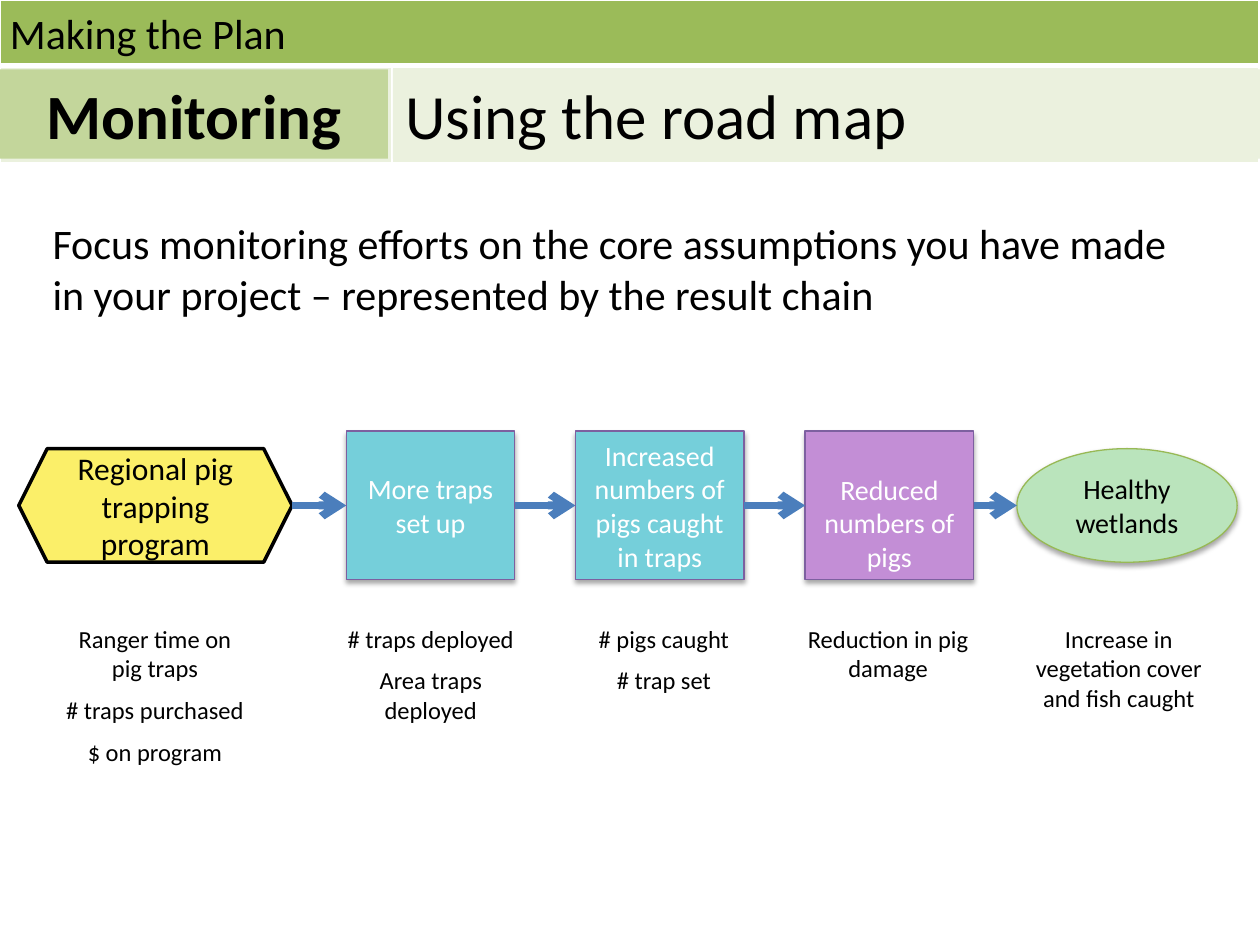
from dataclasses import dataclass
from itertools import pairwise

from lxml.etree import SubElement
from pptx import Presentation
from pptx.dml.color import RGBColor
from pptx.enum.shapes import MSO_CONNECTOR, MSO_SHAPE
from pptx.enum.text import MSO_ANCHOR, PP_ALIGN
from pptx.oxml.ns import qn
from pptx.util import Cm, Pt

FONT = "Calibri"
BLACK = RGBColor(0x00, 0x00, 0x00)
WHITE = RGBColor(0xFF, 0xFF, 0xFF)
GREEN = RGBColor(0x9B, 0xBB, 0x59)
MID_GREEN = RGBColor(0xC3, 0xD6, 0x9B)
PALE_GREEN = RGBColor(0xEB, 0xF1, 0xDE)
YELLOW = RGBColor(0xFB, 0xEF, 0x69)
TURQUOISE = RGBColor(0x75, 0xCF, 0xDA)
PURPLE = RGBColor(0xC3, 0x8E, 0xD6)
MINT = RGBColor(0xBA, 0xE4, 0xBC)
PURPLE_LINE = RGBColor(0x7D, 0x60, 0xA0)
GREEN_LINE = RGBColor(0x98, 0xB9, 0x55)
ARROW_BLUE = RGBColor(0x4B, 0x7E, 0xBC)

# Lengths below are in centimetres
CHAIN_MIDDLE = 10.19
CAPTION_TOP = 12.45


@dataclass
class Stage:
    text: str
    left: float
    fill: RGBColor
    indicators: list[str]
    caption_left: float
    caption_height: float
    caption_width: float = 3.91
    width: float = 3.4
    height: float = 3.0
    geometry: MSO_SHAPE = MSO_SHAPE.RECTANGLE
    line: RGBColor = PURPLE_LINE
    line_width: float = 0.75
    font_size: int = 16
    font_color: RGBColor = WHITE
    shadow: bool = True
    top_inset: float = 0.13


STAGES = [
    Stage("Regional pig trapping program", 0.38, YELLOW,
          ["Ranger time on pig traps", "# traps purchased", "$ on program"],
          0.99, 3.25, caption_width=4.27, width=5.51, height=2.29,
          geometry=MSO_SHAPE.HEXAGON, line=BLACK, line_width=2,
          font_size=18, font_color=BLACK, shadow=False),
    Stage("More traps set up", 6.98, TURQUOISE,
          ["# traps deployed", "Area traps deployed"], 6.73, 2.36),
    Stage("Increased numbers of pigs caught in traps", 11.6, TURQUOISE,
          ["# pigs caught", "# trap set"], 11.43, 2.64),
    Stage("Reduced numbers of pigs", 16.23, PURPLE,
          ["Reduction in pig damage"], 15.95, 1.45, top_inset=0.82),
    Stage("Healthy wetlands", 20.5, MINT,
          ["Increase in vegetation cover and fish caught"], 20.6, 2.06,
          width=4.44, height=2.29, geometry=MSO_SHAPE.OVAL,
          line=GREEN_LINE, font_color=BLACK),
]


def write_text(shape, lines: list[str], size: int, color: RGBColor = BLACK,
               align=PP_ALIGN.LEFT, anchor=MSO_ANCHOR.TOP,
               bold: bool = False) -> None:
    frame = shape.text_frame
    frame.word_wrap = True
    frame.vertical_anchor = anchor
    for index, line in enumerate(lines):
        paragraph = frame.add_paragraph() if index else frame.paragraphs[0]
        paragraph.text = line
        paragraph.alignment = align
        if index:
            paragraph.space_before = Pt(size / 2)
        font = paragraph.font
        font.name, font.size, font.bold = FONT, Pt(size), bold
        font.color.rgb = color


def add_text(slide, left: float, top: float, width: float, height: float,
             lines: list[str], size: int, **style) -> None:
    box = slide.shapes.add_textbox(Cm(left), Cm(top), Cm(width), Cm(height))
    write_text(box, lines, size, **style)


def add_box(slide, geometry: MSO_SHAPE, left: float, top: float,
            width: float, height: float, fill: RGBColor):
    shape = slide.shapes.add_shape(geometry, Cm(left), Cm(top), Cm(width), Cm(height))
    shape.shadow.inherit = False
    shape.fill.solid()
    shape.fill.fore_color.rgb = fill
    shape.line.fill.background()
    return shape


def add_shadow(shape) -> None:
    effects = shape.element.spPr.find(qn("a:effectLst"))
    shadow = SubElement(effects, qn("a:outerShdw"), blurRad=str(Pt(3.1)),
                        dist=str(Pt(1.8)), dir="5400000", rotWithShape="0")
    color = SubElement(shadow, qn("a:srgbClr"), val=str(BLACK))
    SubElement(color, qn("a:alpha"), val="35000")


def style_cell(cell, fill: RGBColor, top: float = 1, bottom: float = 1) -> None:
    properties = cell._tc.get_or_add_tcPr()
    for side, width in (("L", 1), ("R", 1), ("T", top), ("B", bottom)):
        border = SubElement(properties, qn(f"a:ln{side}"), w=str(Pt(width)))
        SubElement(SubElement(border, qn("a:solidFill")), qn("a:srgbClr"), val=str(WHITE))
    cell.fill.solid()
    cell.fill.fore_color.rgb = fill


def add_header(slide) -> None:
    # Banner table
    table = slide.shapes.add_table(2, 2, 0, 0, Cm(25.37), Cm(3.28)).table
    table.first_row = table.horz_banding = False
    for column, width in zip(table.columns, (7.9, 17.47)):
        column.width = Cm(width)
    for row, height in zip(table.rows, (1.32, 1.96)):
        row.height = Cm(height)
    table.cell(0, 0).merge(table.cell(0, 1))
    for column in range(2):
        style_cell(table.cell(0, column), GREEN, bottom=3)
        style_cell(table.cell(1, column), PALE_GREEN, top=3)

    # Titles
    add_text(slide, -0.05, 0, 25.35, 1.3, ["Making the Plan"], 24,
             anchor=MSO_ANCHOR.MIDDLE)
    topic = add_box(slide, MSO_SHAPE.RECTANGLE, 0, 1.4, 7.82, 1.8, MID_GREEN)
    write_text(topic, ["Monitoring"], 36, align=PP_ALIGN.CENTER,
               anchor=MSO_ANCHOR.MIDDLE, bold=True)
    title = add_box(slide, MSO_SHAPE.RECTANGLE, 7.92, 1.4, 17.48, 1.8, PALE_GREEN)
    write_text(title, ["Using the road map"], 36, anchor=MSO_ANCHOR.MIDDLE)


def add_stage(slide, stage: Stage) -> None:
    shape = add_box(slide, stage.geometry, stage.left,
                    CHAIN_MIDDLE - stage.height / 2, stage.width,
                    stage.height, stage.fill)
    shape.line.color.rgb = stage.line
    shape.line.width = Pt(stage.line_width)
    if stage.shadow:
        add_shadow(shape)
    write_text(shape, [stage.text], stage.font_size, color=stage.font_color,
               align=PP_ALIGN.CENTER, anchor=MSO_ANCHOR.MIDDLE)
    shape.text_frame.margin_top = Cm(stage.top_inset)
    add_text(slide, stage.caption_left, CAPTION_TOP, stage.caption_width,
             stage.caption_height, stage.indicators, 14, align=PP_ALIGN.CENTER)


def add_arrow(slide, start: Stage, end: Stage) -> None:
    arrow = slide.shapes.add_connector(
        MSO_CONNECTOR.STRAIGHT, Cm(start.left + start.width), Cm(CHAIN_MIDDLE),
        Cm(end.left), Cm(CHAIN_MIDDLE))
    arrow.line.color.rgb = ARROW_BLUE
    arrow.line.width = Pt(4.5)
    SubElement(arrow.line._get_or_add_ln(), qn("a:tailEnd"), type="arrow")
    SubElement(arrow.element.spPr, qn("a:effectLst"))


def main() -> None:
    presentation = Presentation()
    presentation.slide_width, presentation.slide_height = Cm(25.4), Cm(19.05)
    slide = presentation.slides.add_slide(presentation.slide_layouts[6])

    add_header(slide)
    add_text(slide, 0.81, 4.27, 23.16, 3.33,
             ["Focus monitoring efforts on the core assumptions you have made "
              "in your project – represented by the result chain"], 24)

    # Result chain with its indicators
    for stage in STAGES:
        add_stage(slide, stage)
    for start, end in pairwise(STAGES):
        add_arrow(slide, start, end)

    presentation.save("out.pptx")


if __name__ == "__main__":
    main()
